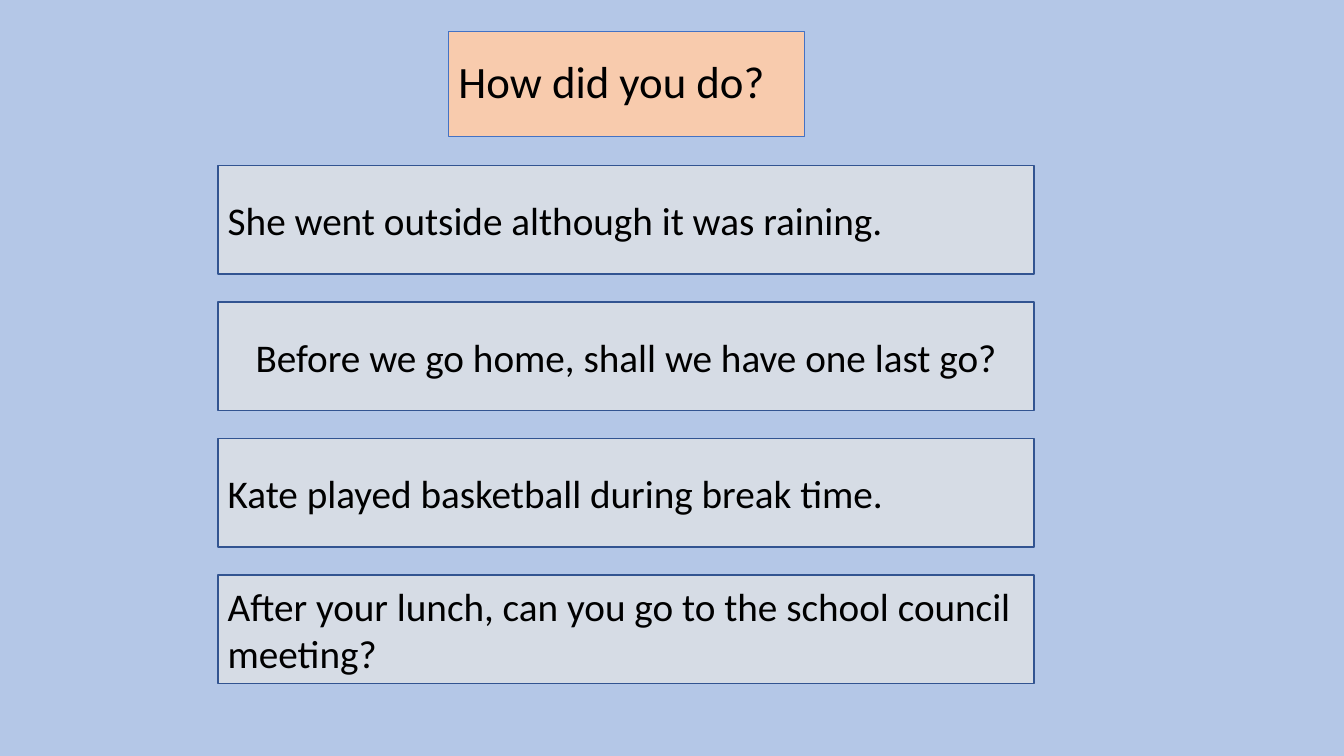
from pptx import Presentation
from pptx.dml.color import RGBColor
from pptx.enum.shapes import MSO_SHAPE
from pptx.enum.text import MSO_ANCHOR, MSO_AUTO_SIZE, PP_ALIGN
from pptx.util import Cm, Pt


def color(value):
    return RGBColor.from_string(value)


def format_box(box, text, size, align, fill, line, width):
    box.fill.solid()
    box.fill.fore_color.rgb = color(fill)
    box.line.color.rgb = color(line)
    box.line.width = Pt(width)
    frame = box.text_frame
    frame.text = text
    frame.word_wrap = True
    frame.auto_size = MSO_AUTO_SIZE.NONE
    frame.vertical_anchor = MSO_ANCHOR.MIDDLE
    para = frame.paragraphs[0]
    para.alignment = align
    span = para.runs[0]
    span.font.name = "Calibri"
    span.font.size = Pt(size)
    span.font.color.rgb = color("000000")


deck = Presentation()
deck.slide_width = Cm(33.87)
deck.slide_height = Cm(19.05)
page = deck.slides.add_slide(deck.slide_layouts[5])
page.background.fill.solid()
page.background.fill.fore_color.rgb = color("B4C7E7")

title = page.shapes.title
title.left, title.top = Cm(11.3), Cm(0.79)
title.width, title.height = Cm(8.97), Cm(2.64)
format_box(title, "How did you do?", 32, PP_ALIGN.LEFT, "F8CBAD", "4472C4", 0.75)
title.text_frame.paragraphs[0].line_spacing = 0.9

sentences = [
    ("She went outside although it was raining.", PP_ALIGN.LEFT),
    ("Before we go home, shall we have one last go?", PP_ALIGN.CENTER),
    ("Kate played basketball during break time.", PP_ALIGN.LEFT),
    ("After your lunch, can you go to the school council meeting?", PP_ALIGN.LEFT),
]
for index, (sentence, align) in enumerate(sentences):
    top = Cm(4.17 + index * 3.44)
    box = page.shapes.add_shape(MSO_SHAPE.RECTANGLE, Cm(5.49), top, Cm(20.57), Cm(2.74))
    box.shadow.inherit = False
    format_box(box, sentence, 28, align, "D6DCE5", "325491", 1)

deck.save("out.pptx")
